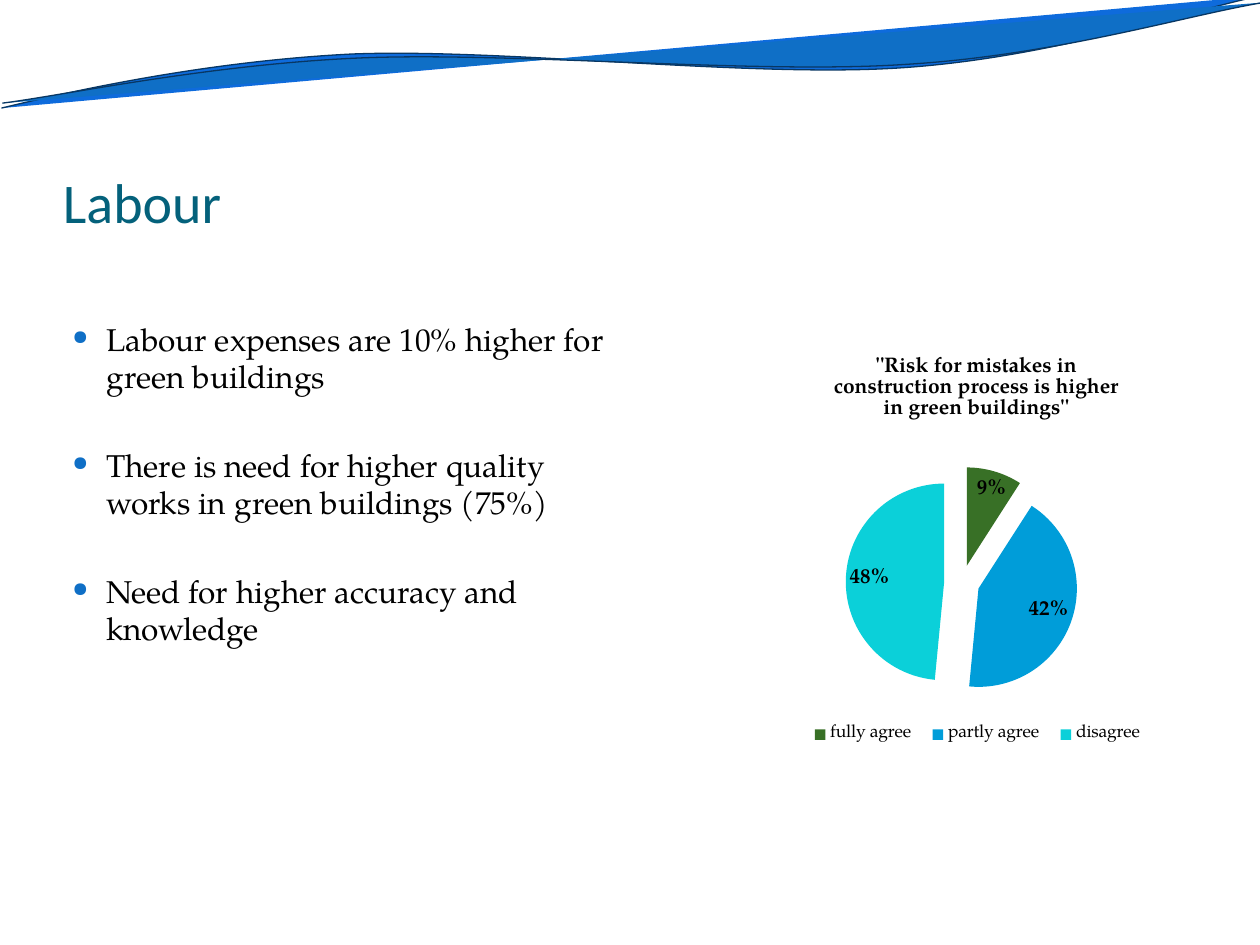
from lxml.etree import SubElement
from pptx import Presentation
from pptx.chart.data import CategoryChartData
from pptx.dml.color import RGBColor
from pptx.enum.chart import XL_CHART_TYPE as ChartType
from pptx.enum.chart import XL_LABEL_POSITION as LabelPosition
from pptx.enum.chart import XL_LEGEND_POSITION as LegendPosition
from pptx.enum.text import MSO_ANCHOR as Anchor
from pptx.oxml.ns import qn
from pptx.util import Cm, Pt

COLORS = {
    "title": "04617B", "text": "000000", "bullet": "0F6FC6",
    "back wave": "0E6BDC", "front wave": "0F6FC6", "wave line": "083763",
    "fully agree": "387026", "partly agree": "009DD9", "disagree": "0BD0D9",
}
TITLE_FONT, BODY_FONT = "Calibri", "TeX Gyre Pagella"

# Each wave: a start point, then Bezier segments (two controls and an end), in cm.
WAVES = {
    "back wave": [(0.03, 2.18),
                  (1.27, 1.88), (4.06, 1.24), (7.09, 1.09),
                  (10.11, 0.97), (15.09, 1.57), (18.14, 1.37),
                  (21.21, 1.17), (23.9, 0.23), (25.4, -0.08)],
    "front wave": [(0.05, 2.08),
                   (1.24, 1.93), (4.22, 1.3), (7.24, 1.17),
                   (10.29, 1.04), (15.21, 1.5), (18.24, 1.3),
                   (21.29, 1.12), (23.95, 0.3), (25.48, 0.05)],
}
BULLETS = [
    "Labour expenses are 10% higher for green buildings",
    "There is need for higher quality works in green buildings (75%)",
    "Need for higher accuracy and knowledge",
]
CHART_TITLE = '"Risk for mistakes in construction process is higher in green buildings"'
ANSWERS = {"fully agree": 9, "partly agree": 42, "disagree": 48}


def color(name):
    return RGBColor.from_string(COLORS[name])


def set_font(font, name, size, color_name, bold=False):
    font.name, font.size, font.bold = name, Pt(size), bold
    font.color.rgb = color(color_name)


def bend_lines(shape):
    """Turn every three line segments of a freeform into one Bezier segment."""
    lines = list(shape._element.iter(qn("a:lnTo")))
    for first in range(0, len(lines), 3):
        curve = SubElement(lines[first].getparent(), qn("a:cubicBezTo"))
        for line in lines[first:first + 3]:
            curve.append(line[0])
            line.getparent().remove(line)


def add_waves(slide, left, top):
    for name, points in WAVES.items():
        start, *rest = [(Cm(x), Cm(y)) for x, y in points]
        builder = slide.shapes.build_freeform(*start)
        builder.add_line_segments(rest, close=False)
        wave = builder.convert_to_shape(left, top)
        bend_lines(wave)
        wave.shadow.inherit = False
        wave.fill.solid()
        wave.fill.fore_color.rgb = color(name)
        wave.line.color.rgb = color("wave line")
        wave.line.width = Pt(0.75)


def add_title(slide, left, top, width, height):
    frame = slide.shapes.add_textbox(left, top, width, height).text_frame
    frame.word_wrap = True
    frame.vertical_anchor = Anchor.BOTTOM
    frame.margin_left = frame.margin_right = frame.margin_bottom = 0
    paragraph = frame.paragraphs[0]
    paragraph.text = "Labour"
    set_font(paragraph.font, TITLE_FONT, 32, "title")


def add_bullet_mark(paragraph):
    properties = paragraph._p.get_or_add_pPr()
    properties.set("marL", str(Cm(1)))
    properties.set("indent", str(-Cm(0.68)))
    mark_color = SubElement(properties, qn("a:buClr"))
    SubElement(mark_color, qn("a:srgbClr"), val=COLORS["bullet"])
    SubElement(properties, qn("a:buSzPct"), val="64000")
    SubElement(properties, qn("a:buChar"), char="●")


def add_bullets(slide, left, top, width, height):
    frame = slide.shapes.add_textbox(left, top, width, height).text_frame
    frame.word_wrap = True
    for index, text in enumerate(BULLETS):
        paragraph = frame.add_paragraph() if index else frame.paragraphs[0]
        paragraph.text = text
        add_bullet_mark(paragraph)
        if index:
            paragraph.space_before = Pt(28.8)
        set_font(paragraph.font, BODY_FONT, 18, "text")


def set_layout(element, index, **values):
    """Give a chart part a manual layout, as fractions of the chart."""
    for old in element.findall(qn("c:layout")):
        element.remove(old)
    layout = SubElement(element, qn("c:layout"))
    element.insert(index, layout)
    manual = SubElement(layout, qn("c:manualLayout"))
    for tag, value in values.items():
        SubElement(manual, qn(f"c:{tag}"), val=str(value))


def add_pie(slide, left, top, width, height):
    data = CategoryChartData()
    data.categories = list(ANSWERS)
    data.add_series(CHART_TITLE, list(ANSWERS.values()))
    chart = slide.shapes.add_chart(ChartType.PIE, left, top, width, height, data).chart
    set_font(chart.font, BODY_FONT, 10, "text")

    chart.has_title = True
    title = chart.chart_title
    title.text_frame.text = CHART_TITLE
    set_font(title.text_frame.paragraphs[0].font, BODY_FONT, 12, "text", bold=True)
    set_layout(title._element, 1, xMode="edge", yMode="edge", x=0.16, y=0.06)

    chart.has_legend = True
    chart.legend.position = LegendPosition.BOTTOM
    chart.legend.include_in_layout = False
    set_font(chart.legend.font, BODY_FONT, 10, "text")
    set_layout(chart.legend._element, 1, xMode="edge", yMode="edge",
               x=0.08, y=0.88, w=0.92, h=0.08)
    set_layout(chart._chartSpace.chart.plotArea, 0, layoutTarget="inner",
               xMode="edge", yMode="edge", x=0.05, y=0.32, w=0.9, h=0.52)

    plot = chart.plots[0]
    plot.vary_by_categories = True
    series = plot.series[0]
    for index, answer in enumerate(ANSWERS):
        fill = series.points[index].format.fill
        fill.solid()
        fill.fore_color.rgb = color(answer)
    explosion = SubElement(series._element, qn("c:explosion"), val="18")
    series._element.find(qn("c:dPt")).addprevious(explosion)

    labels = series.data_labels
    labels.show_percentage, labels.show_value = True, False
    labels.number_format, labels.number_format_is_linked = "0%", False
    labels.position = LabelPosition.BEST_FIT
    set_font(labels.font, BODY_FONT, 12, "text", bold=True)


def main():
    presentation = Presentation()
    presentation.slide_width, presentation.slide_height = Cm(25.4), Cm(19.05)
    slide = presentation.slides.add_slide(presentation.slide_layouts[6])
    add_waves(slide, Cm(0), Cm(0))
    add_title(slide, Cm(1.27), Cm(1.96), Cm(22.86), Cm(2.77))
    add_pie(slide, Cm(15.48), Cm(6.53), Cm(7.82), Cm(9))
    add_bullets(slide, Cm(0.89), Cm(6.32), Cm(11.81), Cm(10.31))
    presentation.save("out.pptx")


if __name__ == "__main__":
    main()
